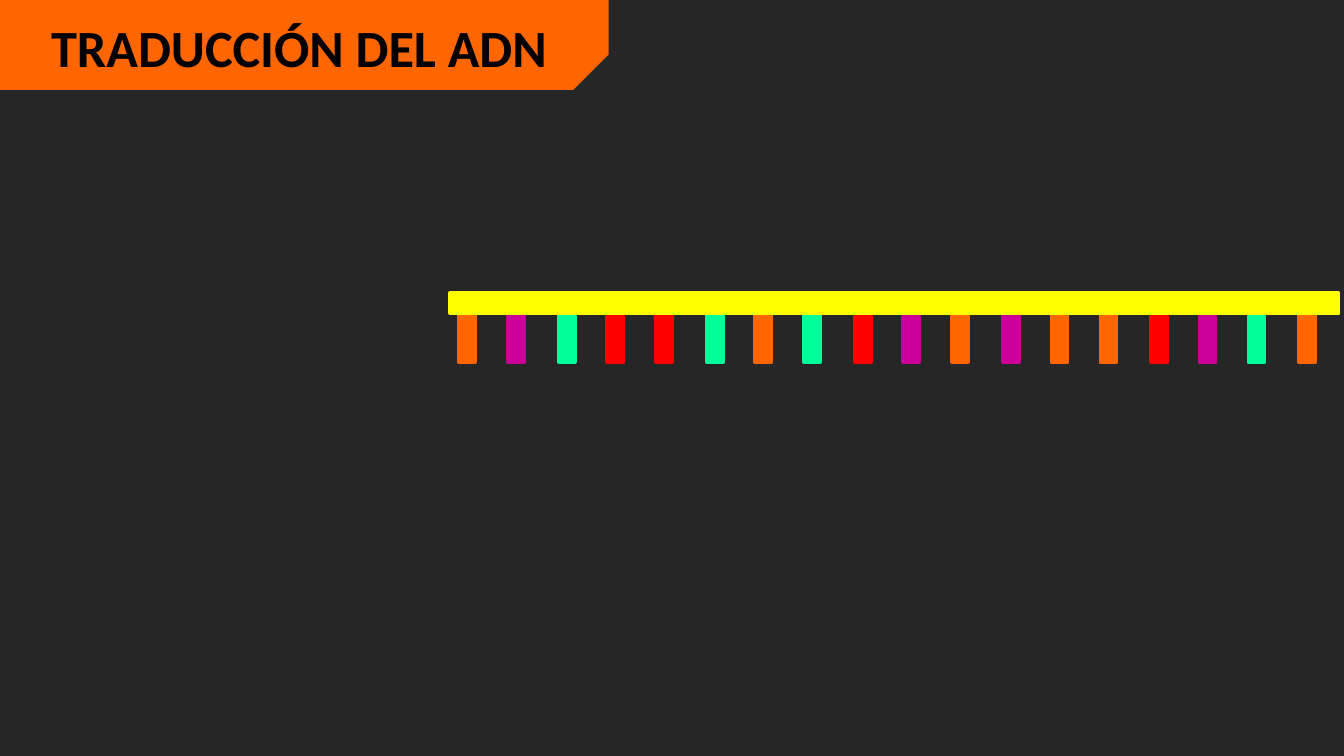
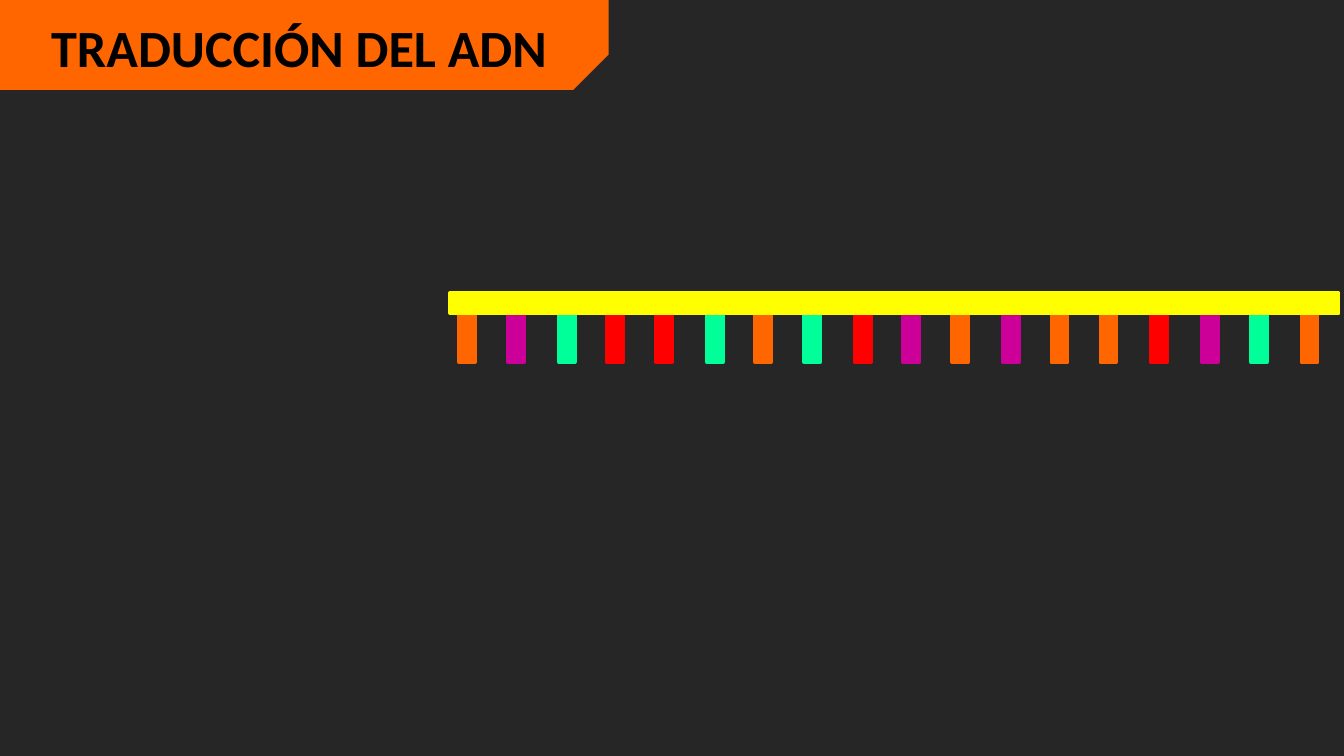
from pptx import Presentation
from pptx.dml.color import RGBColor as Rgb
from pptx.enum.shapes import MSO_SHAPE as Kind
from pptx.enum.text import MSO_ANCHOR as Anchor, MSO_AUTO_SIZE as Auto, PP_ALIGN as Align
from pptx.util import Pt

COLORS = {
    "back": "262626",
    "band": "FF6600",
    "text": "000000",
    "spine": "FFFF00",
    "O": "FF6600",
    "P": "CC0099",
    "G": "00FF99",
    "R": "FF0000",
}
FONT = "Calibri"
CODONS = ["OPG", "RRG", "OGR", "POP", "OOR", "PGO"]
ORDER = [3, 4, 5, 0, 1, 2]
LAST = len(CODONS) - 1
START, PITCH = 241.2, 79.35
STEPS = [-9.4, 16.8, 44]


class Deck:
    def __init__(self):
        self.prs = Presentation()
        self.prs.slide_width, self.prs.slide_height = Pt(720), Pt(405)
        self.paint(self.prs.slide_master.background.fill, "back")
        self.slide = None

    def paint(self, fill, name):
        fill.solid()
        fill.fore_color.rgb = Rgb.from_string(COLORS[name])

    def page(self):
        self.slide = self.prs.slides.add_slide(self.prs.slide_layouts[5])

    def shape(self, kind, box, name, line=0):
        item = self.slide.shapes.add_shape(kind, *map(Pt, box))
        item.shadow.inherit = False
        self.paint(item.fill, name)
        if line:
            item.line.width = Pt(line)
            self.paint(item.line.fill, name)
        else:
            item.line.fill.background()
        return item

    def title(self, text):
        band = self.shape(Kind.SNIP_1_RECTANGLE, (0, 0, 326, 48.2), "band")
        band.adjustments[0] = 0.395
        band.rotation = 180
        band._element.spPr.xfrm.set("flipH", "1")

        title = self.slide.shapes.title
        title.left, title.top, title.width, title.height = map(Pt, (20.2, 4.3, 283, 41.2))
        frame = title.text_frame
        frame.text = text
        frame.word_wrap = False
        frame.auto_size = Auto.SHAPE_TO_FIT_TEXT
        frame.vertical_anchor = Anchor.TOP
        para = frame.paragraphs[0]
        para.alignment = Align.LEFT
        para.font.name, para.font.size, para.font.bold = FONT, Pt(28), True
        para.font.color.rgb = Rgb.from_string(COLORS["text"])
        self.slide.shapes._spTree.append(title._element)

    def bases(self, index, shift=0):
        left = START + index * PITCH + shift
        for step, base in zip(STEPS, CODONS[index]):
            bar = self.shape(Kind.RECTANGLE, (left + step, 171.4, 36.7, 8.6), base, 2)
            bar.rotation = 90

    def spine(self, index):
        self.shape(Kind.RECTANGLE, (START + index * PITCH, 157, 79.2, 10.8), "spine", 2)


def main():
    deck = Deck()
    for loose in (False, True):
        deck.page()
        if loose:
            deck.bases(LAST, 1.2)
        deck.title("TRADUCCIÓN DEL ADN")
        for index in ORDER:
            if not (loose and index == LAST):
                deck.bases(index)
            deck.spine(index)
    deck.prs.save("out.pptx")


if __name__ == "__main__":
    main()
